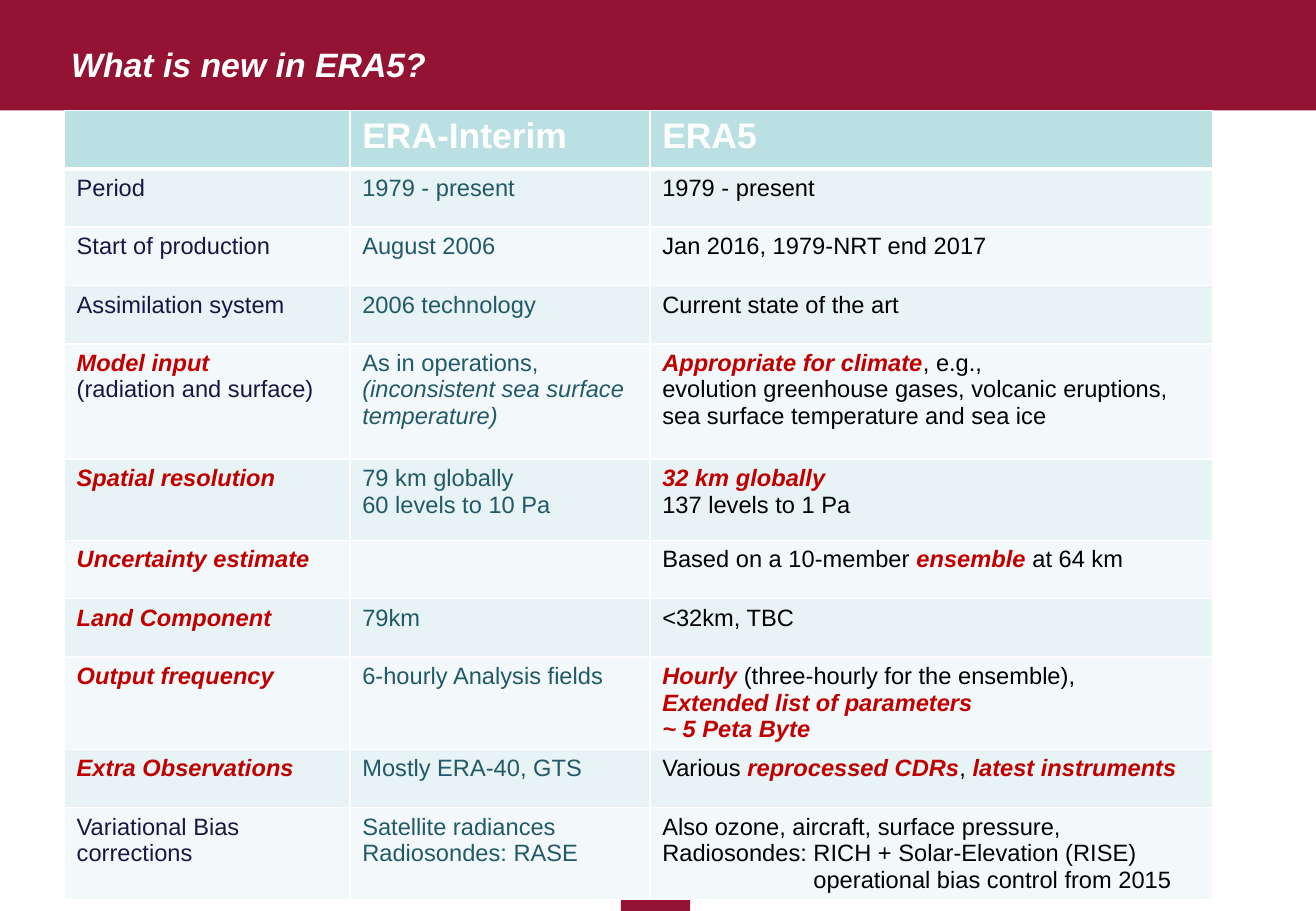
from dataclasses import dataclass

from lxml import etree
from pptx import Presentation
from pptx.dml.color import RGBColor
from pptx.enum.shapes import MSO_SHAPE
from pptx.enum.text import MSO_ANCHOR, MSO_AUTO_SIZE, PP_ALIGN
from pptx.oxml.ns import qn
from pptx.util import Cm, Pt

RECTANGLE = MSO_SHAPE.RECTANGLE
MIDDLE, TOP = MSO_ANCHOR.MIDDLE, MSO_ANCHOR.TOP
CENTER, LEFT = PP_ALIGN.CENTER, PP_ALIGN.LEFT
NO_AUTOFIT = MSO_AUTO_SIZE.NONE

FONT = "Arial"
WHITE = RGBColor(0xFF, 0xFF, 0xFF)
MAROON = RGBColor(0x94, 0x13, 0x33)
RED = RGBColor(0xC0, 0x00, 0x00)
NAVY = RGBColor(0x17, 0x17, 0x45)
TEAL = RGBColor(0x21, 0x59, 0x68)
BLACK = RGBColor(0x00, 0x00, 0x00)
HEADER_FILL = RGBColor(0xBB, 0xE0, 0xE3)
BAND_FILLS = (RGBColor(0xF3, 0xF9, 0xFA), RGBColor(0xE7, 0xF3, 0xF4))
COLUMN_COLORS = (NAVY, TEAL, BLACK)
COLUMN_WIDTHS = (5.97, 6.27, 11.76)
HEADER_HEIGHT = 1.22


@dataclass(frozen=True)
class Span:
    text: str
    strong: bool = False
    italic: bool = False


@dataclass(frozen=True)
class Line:
    spans: tuple[Span, ...]
    indent: float = 0


@dataclass(frozen=True)
class Row:
    cells: tuple[tuple[Line, ...], ...]
    height: float = 1.22


@dataclass(frozen=True)
class Block:
    left: float
    top: float
    width: float
    height: float


BLOCKS = (Block(0, 0, 27.51, 2.31), Block(12.98, 18.29, 1.45, 0.76))


def plain(text: str, indent: float = 0) -> Line:
    return Line((Span(text),), indent)


def strong(text: str) -> Line:
    return Line((Span(text, strong=True),))


HEADINGS = ("", "ERA-Interim", "ERA5")
ROWS = (
    Row(((plain("Period"),), (plain("1979 - present"),), (plain("1979 - present"),))),
    Row(((plain("Start of production"),), (plain("August 2006"),),
         (plain("Jan 2016, 1979-NRT end 2017"),))),
    Row(((plain("Assimilation system"),), (plain("2006 technology"),),
         (plain("Current state of the art"),))),
    Row(((strong("Model input"), plain("(radiation and surface)")),
         (plain("As in operations,"),
          Line((Span("(inconsistent sea surface temperature)", italic=True),))),
         (Line((Span("Appropriate for climate", strong=True), Span(", e.g.,"))),
          plain("evolution greenhouse gases, volcanic eruptions, "
                "sea surface temperature and sea ice"))), 2.41),
    Row(((strong("Spatial resolution"),),
         (plain("79 km globally"), plain("60 levels to 10 Pa")),
         (strong("32 km globally"), plain("137 levels to 1 Pa"))), 1.7),
    Row(((strong("Uncertainty estimate"),), (),
         (Line((Span("Based on a 10-member "), Span("ensemble", strong=True),
                Span(" at 64 km"))),))),
    Row(((strong("Land Component"),), (plain("79km"),), (plain("<32km, TBC"),))),
    Row(((strong("Output frequency"),), (plain("6-hourly Analysis fields"),),
         (Line((Span("Hourly", strong=True), Span(" (three-hourly for the ensemble),"))),
          strong("Extended list of parameters"), strong("~ 5 Peta Byte"))), 1.93),
    Row(((strong("Extra Observations"),), (plain("Mostly ERA-40, GTS"),),
         (Line((Span("Various "), Span("reprocessed CDRs", strong=True), Span(", "),
                Span("latest instruments", strong=True))),))),
    Row(((plain("Variational Bias corrections"),),
         (plain("Satellite radiances"), plain("Radiosondes: RASE")),
         (plain("Also ozone, aircraft, surface pressure,"),
          plain("Radiosondes: RICH + Solar-Elevation (RISE)"),
          plain("operational bias control from 2015", 3.16))), 1.9),
)


def add_span(para, text: str, size: float, color: RGBColor,
             bold: bool = False, italic: bool = False) -> None:
    span = para.add_run()
    span.text = text
    font = span.font
    font.name, font.size, font.bold, font.italic = FONT, Pt(size), bold, italic
    font.color.rgb = color


def add_block(page, block: Block) -> None:
    shape = page.shapes.add_shape(RECTANGLE, Cm(block.left), Cm(block.top),
                                  Cm(block.width), Cm(block.height))
    shape.shadow.inherit = False
    shape.fill.solid()
    shape.fill.fore_color.rgb = MAROON
    shape.line.fill.background()


def style_cell(cell, fill: RGBColor, top: float, bottom: float) -> None:
    properties = cell._tc.get_or_add_tcPr()
    for side, width in (("L", 1), ("R", 1), ("T", top), ("B", bottom)):
        border = etree.SubElement(properties, qn(f"a:ln{side}"), w=str(Pt(width)))
        paint = etree.SubElement(border, qn("a:solidFill"))
        etree.SubElement(paint, qn("a:srgbClr"), val=str(WHITE))
    cell.fill.solid()
    cell.fill.fore_color.rgb = fill
    cell.vertical_anchor = TOP


def write_cell(cell, lines: tuple[Line, ...], color: RGBColor) -> None:
    frame = cell.text_frame
    for number, line in enumerate(lines):
        para = frame.add_paragraph() if number else frame.paragraphs[0]
        para.alignment = LEFT
        if line.indent:
            para._p.get_or_add_pPr().set("marL", str(Cm(line.indent)))
        for span in line.spans:
            add_span(para, span.text, 14, RED if span.strong else color,
                     span.strong, span.strong or span.italic)


def add_comparison(page) -> None:
    heights = (HEADER_HEIGHT, *(row.height for row in ROWS))
    table = page.shapes.add_table(len(heights), len(COLUMN_WIDTHS), Cm(1.35), Cm(2.31),
                                  Cm(sum(COLUMN_WIDTHS)), Cm(sum(heights))).table
    for column, width in zip(table.columns, COLUMN_WIDTHS):
        column.width = Cm(width)
    for table_row, height in zip(table.rows, heights):
        table_row.height = Cm(height)
    for index, heading in enumerate(HEADINGS):
        cell = table.cell(0, index)
        style_cell(cell, HEADER_FILL, 1, 3)
        if heading:
            para = cell.text_frame.paragraphs[0]
            para.alignment = LEFT
            add_span(para, heading, 21, WHITE, bold=True)
    for number, row in enumerate(ROWS, start=1):
        for index, lines in enumerate(row.cells):
            cell = table.cell(number, index)
            style_cell(cell, BAND_FILLS[number % 2], 3 if number == 1 else 1, 1)
            write_cell(cell, lines, COLUMN_COLORS[index])


def add_title(page) -> None:
    title = page.shapes.title
    title.left, title.top, title.width, title.height = Cm(0.08), Cm(0.84), Cm(10.24), Cm(0.99)
    frame = title.text_frame
    frame.auto_size = NO_AUTOFIT
    frame.word_wrap = True
    frame.vertical_anchor = MIDDLE
    para = frame.paragraphs[0]
    para.alignment = CENTER
    add_span(para, "What is new in ERA5?", 20, WHITE, bold=True, italic=True)
    page.shapes._spTree.append(title._element)


def main() -> None:
    deck = Presentation()
    deck.slide_width, deck.slide_height = Cm(27.51), Cm(19.05)
    page = deck.slides.add_slide(deck.slide_layouts[5])
    for block in BLOCKS:
        add_block(page, block)
    add_comparison(page)
    add_title(page)
    deck.save("out.pptx")


if __name__ == "__main__":
    main()
